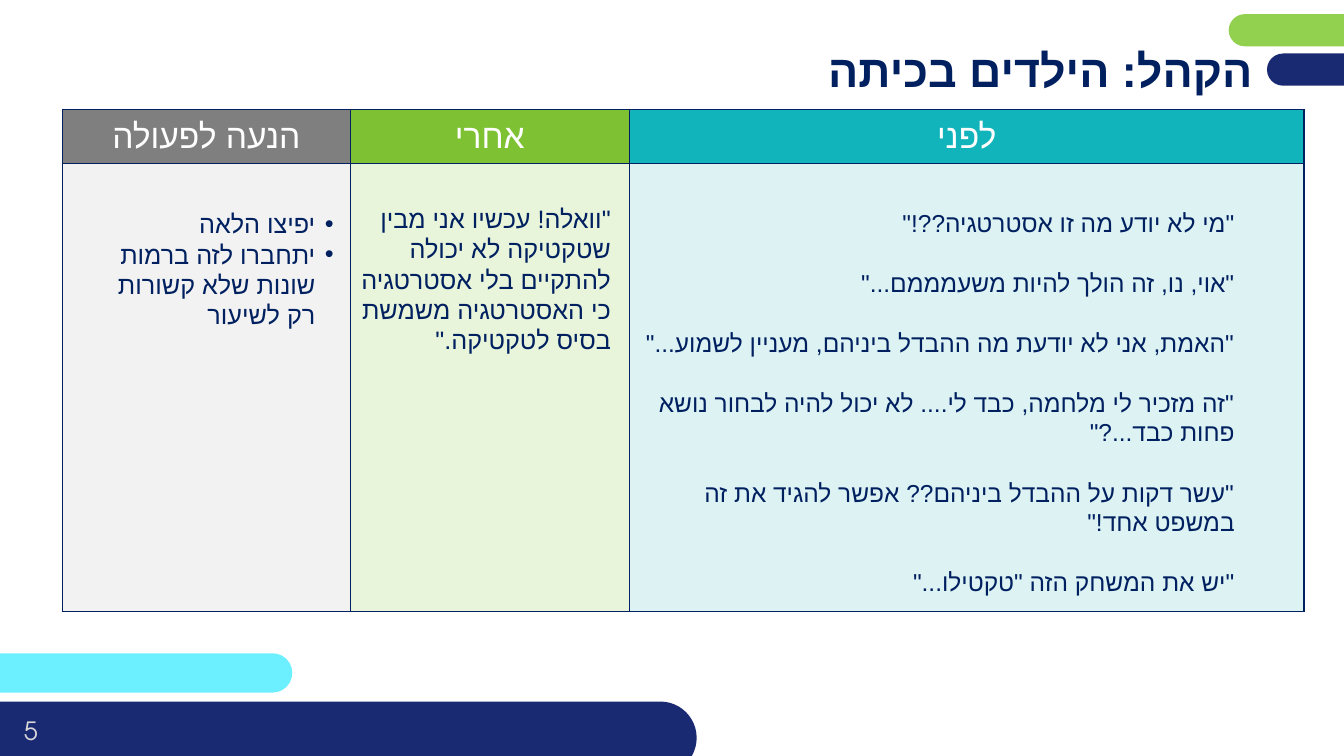
"""Build the slide on the audience: the children in class, before, after and call to action."""
from dataclasses import dataclass

from lxml.etree import SubElement
from pptx import Presentation
from pptx.dml.color import RGBColor
from pptx.enum.lang import MSO_LANGUAGE_ID as LANG
from pptx.enum.shapes import MSO_SHAPE as SHAPE
from pptx.enum.text import MSO_ANCHOR as ANCHOR, MSO_AUTO_SIZE as FIT, PP_ALIGN as ALIGN
from pptx.oxml.ns import qn
from pptx.util import Pt

NAVY = "002060"
DEEP_BLUE = "192A72"
WHITE = "FFFFFF"


@dataclass(frozen=True)
class Box:
    left: float
    top: float
    width: float
    height: float

    def lengths(self) -> list:
        return [Pt(v) for v in (self.left, self.top, self.width, self.height)]


@dataclass(frozen=True)
class Pill:
    box: Box
    color: str


@dataclass(frozen=True)
class Column:
    heading: str
    width: float
    head_fill: str
    body_fill: str


@dataclass(frozen=True)
class Style:
    size: float = 18
    color: str = NAVY
    font: str = "Arial"
    bold: bool = False
    align: ALIGN = ALIGN.RIGHT
    anchor: ANCHOR = ANCHOR.TOP
    inset_x: float = 7.2
    inset_y: float = 3.6
    gap: float = 0
    rtl: bool = True
    bullet: bool = False


PILLS = [
    Pill(Box(905, 38.2, 123.8, 23), DEEP_BLUE),
    Pill(Box(877.7, 10.1, 148.3, 23), "92D050"),
    Pill(Box(-38.2, 466.6, 247, 28.1), "6CF0FF"),
    Pill(Box(-77, 501.1, 574.6, 51.8), DEEP_BLUE),
]
COLUMNS = [
    Column("הנעה לפעולה", 205.5, "7F7F7F", "F2F2F2"),
    Column("אחרי", 199.4, "7EC234", "E8F5DB"),
    Column("לפני", 481.9, "12B4BC", "DDF2F3"),
]
ROW_HEIGHTS = [38.9, 319.7]
TABLE_LEFT, TABLE_TOP = 44.7, 78

TITLE = "הקהל: הילדים בכיתה"
BEFORE = [
    '"מי לא יודע מה זו אסטרטגיה??!"',
    '"אוי, נו, זה הולך להיות משעמממם..."',
    '"האמת, אני לא יודעת מה ההבדל ביניהם, מעניין לשמוע..."',
    '"זה מזכיר לי מלחמה, כבד לי.... לא יכול להיה לבחור נושא פחות כבד...?"',
    '"עשר דקות על ההבדל ביניהם?? אפשר להגיד את זה במשפט אחד!"',
    '"יש את המשחק הזה "טקטילו..."',
]
AFTER = [
    '"וואלה! עכשיו אני מבין שטקטיקה לא יכולה להתקיים בלי אסטרטגיה '
    'כי האסטרטגיה משמשת בסיס לטקטיקה."'
]
ACTIONS = ["יפיצו הלאה", "יתחברו לזה ברמות שונות שלא קשורות רק לשיעור"]


def paint(fmt, color: str) -> None:
    if hasattr(fmt, "solid"):
        fmt.solid()
        fmt = fmt.fore_color
    fmt.rgb = RGBColor.from_string(color)


def set_all(obj, values: dict) -> None:
    for name, value in values.items():
        setattr(obj, name, value)


def add_bullet(p, color: str) -> None:
    pPr = p._p.get_or_add_pPr()
    pPr.set("marL", str(Pt(13)))
    pPr.set("indent", str(-Pt(13)))
    clr = SubElement(pPr, qn("a:buClr"))
    SubElement(clr, qn("a:srgbClr"), val=color)
    SubElement(pPr, qn("a:buFont"), typeface="Arial")
    SubElement(pPr, qn("a:buChar"), char="•")


def write(tf, lines: list[str], style: Style) -> None:
    for i, line in enumerate(lines):
        p = tf.paragraphs[0] if i == 0 else tf.add_paragraph()
        set_all(p, {
            "alignment": style.align,
            "space_before": Pt(style.gap if i else 0),
            "space_after": Pt(0),
        })
        if style.rtl:
            p._p.get_or_add_pPr().set("rtl", "1")
        if style.bullet:
            add_bullet(p, style.color)
        r = p.add_run()
        r.text = line
        set_all(r.font, {"name": style.font, "size": Pt(style.size), "bold": style.bold})
        paint(r.font.fill, style.color)
        if style.rtl:
            r.font.language_id = LANG.HEBREW
        SubElement(r._r.get_or_add_rPr(), qn("a:cs"), typeface=style.font)


def fill_box(sp, box: Box, lines: list[str], style: Style) -> None:
    set_all(sp, dict(zip(("left", "top", "width", "height"), box.lengths())))
    set_all(sp.text_frame, {
        "word_wrap": True,
        "auto_size": FIT.NONE,
        "vertical_anchor": style.anchor,
        "margin_left": Pt(style.inset_x),
        "margin_right": Pt(style.inset_x),
        "margin_top": Pt(style.inset_y),
        "margin_bottom": Pt(style.inset_y),
    })
    write(sp.text_frame, lines, style)


def add_text(s, box: Box, lines: list[str], style: Style) -> None:
    fill_box(s.shapes.add_textbox(*box.lengths()), box, lines, style)


def add_pill(s, pill: Pill) -> None:
    sp = s.shapes.add_shape(SHAPE.ROUNDED_RECTANGLE, *pill.box.lengths())
    sp.adjustments[0] = 0.5
    sp.shadow.inherit = False
    sp.line.fill.background()
    paint(sp.fill, pill.color)


def add_borders(cell) -> None:
    tcPr = cell._tc.get_or_add_tcPr()
    for i, side in enumerate(("lnL", "lnR", "lnT", "lnB")):
        ln = tcPr.makeelement(qn(f"a:{side}"), {"w": str(Pt(1))})
        solid = SubElement(ln, qn("a:solidFill"))
        SubElement(solid, qn("a:srgbClr"), val=NAVY)
        tcPr.insert(i, ln)


def add_columns_table(s) -> None:
    box = Box(TABLE_LEFT, TABLE_TOP, sum(c.width for c in COLUMNS), sum(ROW_HEIGHTS))
    table = s.shapes.add_table(len(ROW_HEIGHTS), len(COLUMNS), *box.lengths()).table
    set_all(table, {"first_row": False, "horz_banding": False})
    for row, height in zip(table.rows, ROW_HEIGHTS):
        row.height = Pt(height)
    heading = Style(size=24, color=WHITE, align=ALIGN.CENTER)
    for i, column in enumerate(COLUMNS):
        table.columns[i].width = Pt(column.width)
        for j, color in enumerate((column.head_fill, column.body_fill)):
            cell = table.cell(j, i)
            cell.vertical_anchor = ANCHOR.MIDDLE
            paint(cell.fill, color)
            add_borders(cell)
        write(table.cell(0, i).text_frame, [column.heading], heading)


def main() -> None:
    prs = Presentation()
    set_all(prs, {"slide_width": Pt(960), "slide_height": Pt(540)})
    s = prs.slides.add_slide(prs.slide_layouts[1])
    title, actions = s.shapes.title, s.placeholders[1]
    for pill in PILLS:
        add_pill(s, pill)
    add_text(s, Box(-10.1, 501.1, 64.1, 41), ["5"],
             Style(color="D8D8D8", font="TeX Gyre Adventor", align=ALIGN.CENTER,
                   anchor=ANCHOR.MIDDLE, rtl=False))
    fill_box(title, Box(123.1, 21.6, 771.8, 56.9), [TITLE],
             Style(size=32, bold=True, anchor=ANCHOR.MIDDLE, inset_x=0, inset_y=0))
    s.shapes.element.append(title.element)
    add_columns_table(s)
    add_text(s, Box(450, 141.8, 439.2, 290.9), BEFORE,
             Style(size=17.5, anchor=ANCHOR.MIDDLE, gap=22))
    add_text(s, Box(245.5, 141.8, 198, 116.6), AFTER, Style())
    fill_box(actions, Box(64.8, 145.4, 180.7, 94.3), ACTIONS, Style(bullet=True))
    s.shapes.element.append(actions.element)
    prs.save("out.pptx")


if __name__ == "__main__":
    main()
